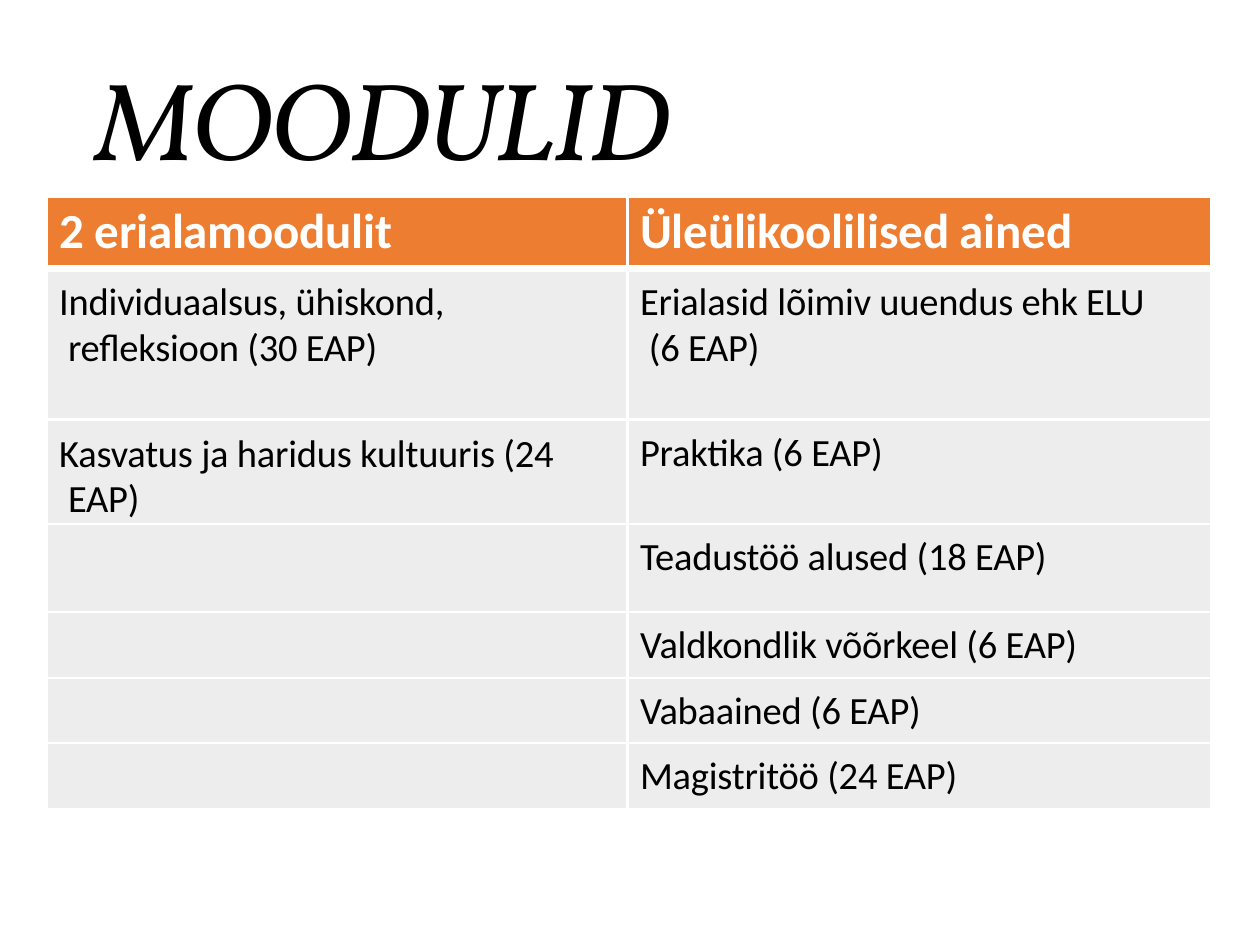
from lxml import etree
from pptx import Presentation
from pptx.dml.color import RGBColor
from pptx.enum.text import MSO_ANCHOR
from pptx.oxml.ns import qn
from pptx.util import Inches, Pt

TOP = MSO_ANCHOR.TOP
WHITE, BLACK, ORANGE, GREY = "FFFFFF", "000000", "ED7D31", "EDEDED"

TITLE_FORMAT = {"name": "Vollkorn", "size": Pt(63), "italic": True, "color": BLACK}
HEADER_FORMAT = {"name": "Calibri", "size": Pt(28), "bold": True, "color": WHITE}
BODY_FORMAT = {"name": "Calibri", "size": Pt(22), "bold": False, "color": BLACK}

MODULES = [
    ("2 erialamoodulit", "Üleülikoolilised ained"),
    ("Individuaalsus, ühiskond,\vrefleksioon (30 EAP)", "Erialasid lõimiv uuendus ehk ELU\v(6 EAP)"),
    ("Kasvatus ja haridus kultuuris (24\vEAP)", "Praktika (6 EAP)"),
    ("", "Teadustöö alused (18 EAP)"),
    ("", "Valdkondlik võõrkeel (6 EAP)"),
    ("", "Vabaained (6 EAP)"),
    ("", "Magistritöö (24 EAP)"),
]
COLUMN_WIDTHS = [4.61, 4.63]
ROW_HEIGHTS = [0.57, 1.2, 0.83, 0.7, 0.52, 0.52, 0.52]
THIN, THICK = 1.5, 4.5
TEXT_INDENT, HANGING = 0.1, 0.07


def rgb(value):
    return RGBColor.from_string(value)


def format_runs(paragraph, values, spacing):
    """Apply font values and letter spacing (points) to every run."""
    for run in paragraph.runs:
        for name, value in values.items():
            if name == "color":
                run.font.color.rgb = rgb(value)
            else:
                setattr(run.font, name, value)
        run._r.get_or_add_rPr().set("spc", str(round(spacing * 100)))


def set_borders(cell, widths):
    """Draw white borders; must run before the cell gets its fill."""
    properties = cell._tc.get_or_add_tcPr()
    for side, width in widths.items():
        line = etree.SubElement(properties, qn(f"a:ln{side}"), w=str(Pt(width)))
        fill = etree.SubElement(line, qn("a:solidFill"))
        etree.SubElement(fill, qn("a:srgbClr"), val=WHITE)


def add_title(slide, left, top, width, height):
    frame = slide.shapes.add_textbox(*map(Inches, (left, top, width, height))).text_frame
    frame.word_wrap = True
    frame.vertical_anchor = TOP
    frame.margin_left = frame.margin_right = frame.margin_bottom = 0
    frame.margin_top = Inches(0.02)
    title = frame.paragraphs[0]
    title.text = "MOODULID"
    format_runs(title, TITLE_FORMAT, -1.6)


def fill_cell(cell, text, row):
    is_header = row == 0
    wraps = "\v" in text
    set_borders(cell, {"L": THIN, "R": THIN,
                       "T": THICK if row == 1 else THIN,
                       "B": THICK if is_header else THIN})
    cell.fill.solid()
    cell.fill.fore_color.rgb = rgb(ORANGE if is_header else GREY)
    cell.vertical_anchor = TOP
    cell.margin_right = cell.margin_bottom = 0
    cell.margin_left = Inches(TEXT_INDENT)
    cell.margin_top = Inches(0.04 if is_header else 0.1 if wraps else 0.08)
    entry = cell.text_frame.paragraphs[0]
    entry.text = text
    if wraps:
        entry.line_spacing = Pt(25.9)
        hanging = Inches(HANGING)
        entry._p.get_or_add_pPr().set("marL", str(hanging))
        entry._p.get_or_add_pPr().set("indent", str(-hanging))
    format_runs(entry, HEADER_FORMAT if is_header else BODY_FORMAT, -0.1)


def add_module_table(slide, left, top):
    table = slide.shapes.add_table(
        len(MODULES), len(COLUMN_WIDTHS), Inches(left), Inches(top),
        Inches(sum(COLUMN_WIDTHS)), Inches(sum(ROW_HEIGHTS))).table
    table.horz_banding = False
    for column, width in zip(table.columns, COLUMN_WIDTHS):
        column.width = Inches(width)
    for row, (height, entries) in enumerate(zip(ROW_HEIGHTS, MODULES)):
        table.rows[row].height = Inches(height)
        for column, text in enumerate(entries):
            fill_cell(table.cell(row, column), text, row)


def main():
    deck = Presentation()
    deck.slide_width, deck.slide_height = Inches(10), Inches(7.5)
    slide = deck.slides.add_slide(deck.slide_layouts[6])
    add_title(slide, 0.77, 0.38, 4.86, 1.08)
    add_module_table(slide, 0.37, 1.56)
    deck.save("out.pptx")


if __name__ == "__main__":
    main()
